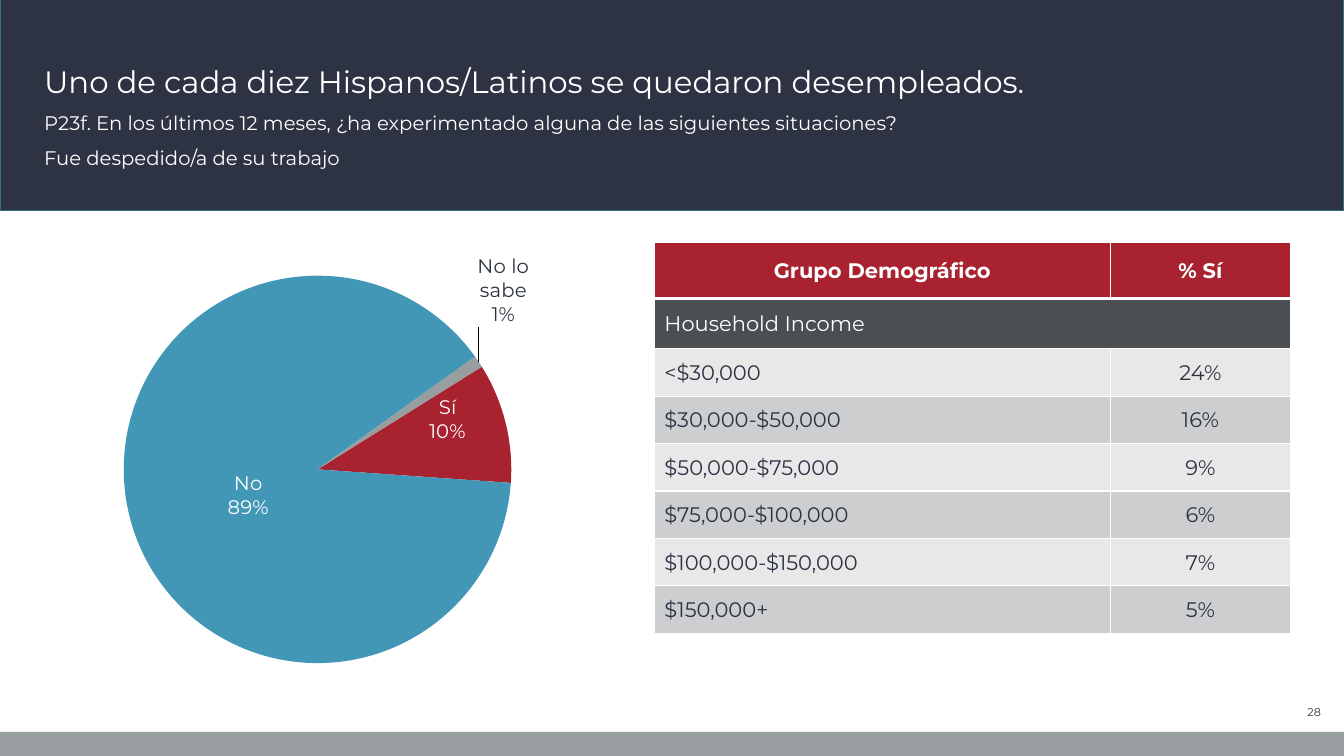
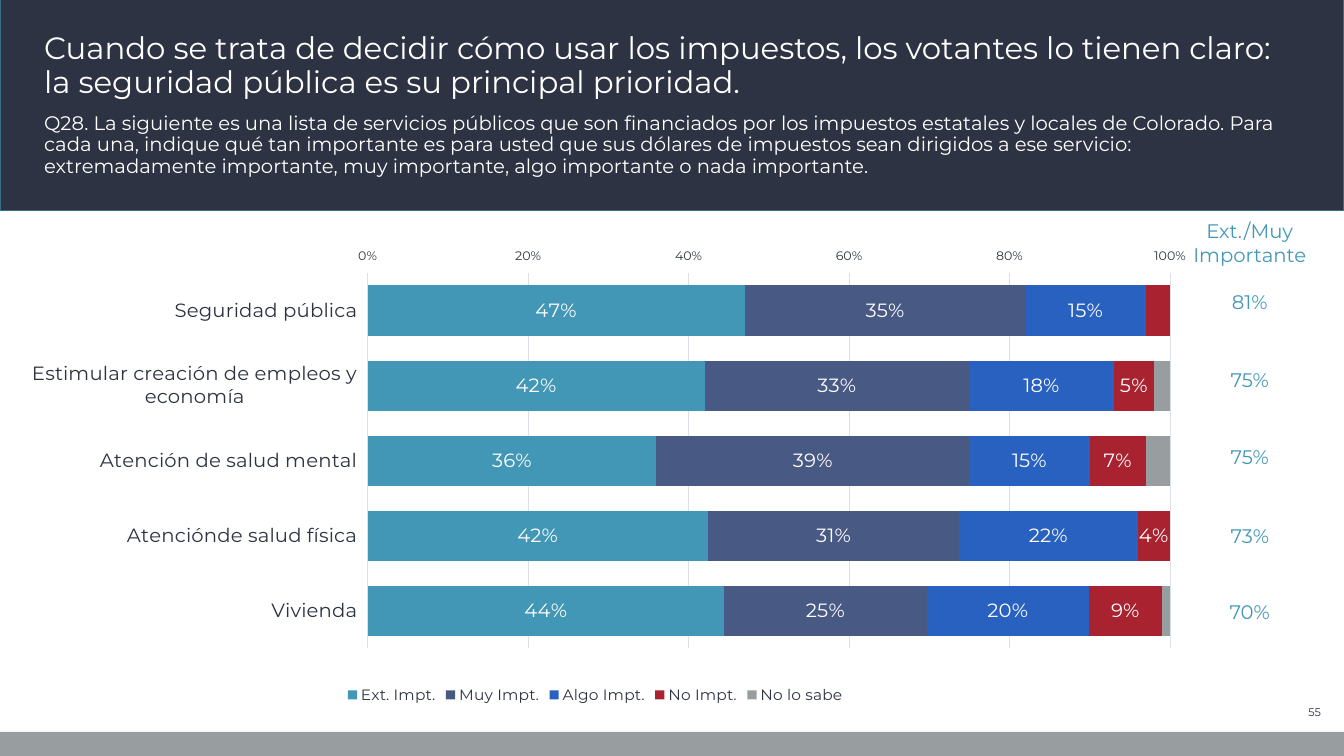
from dataclasses import dataclass
from typing import NamedTuple, Sequence

from lxml.etree import SubElement
from pptx import Presentation
from pptx.chart.chart import Chart
from pptx.chart.data import CategoryChartData
from pptx.dml.color import RGBColor
from pptx.enum.chart import XL_CHART_TYPE, XL_LABEL_POSITION, XL_LEGEND_POSITION
from pptx.enum.chart import XL_AXIS_CROSSES
from pptx.enum.shapes import MSO_SHAPE
from pptx.enum.text import MSO_ANCHOR, PP_ALIGN
from pptx.oxml import parse_xml
from pptx.oxml.ns import nsdecls, qn
from pptx.slide import Slide
from pptx.table import Table, _Cell
from pptx.util import Emu, Inches, Pt

NAVY = RGBColor(0x2D, 0x33, 0x42)
OUTLINE = RGBColor(0x32, 0x70, 0x87)
TEAL = RGBColor(0x43, 0x97, 0xB6)
SLATE = RGBColor(0x48, 0x5A, 0x84)
BLUE = RGBColor(0x29, 0x61, 0xC0)
RED = RGBColor(0xA8, 0x22, 0x30)
GRAY = RGBColor(0x98, 0x9D, 0xA0)
CHARCOAL = RGBColor(0x4B, 0x4F, 0x51)
LIGHT = RGBColor(0xE8, 0xE8, 0xE9)
MEDIUM = RGBColor(0xCD, 0xCE, 0xCF)
GRID = RGBColor(0xDB, 0xDF, 0xE7)
WHITE = RGBColor(0xFF, 0xFF, 0xFF)

FONT = "Montserrat"
PLAIN_TABLE = "{2D5ABB26-0587-4C30-8999-92F81FD0307C}"
WIDTH, HEIGHT = Inches(13.33), Inches(7.5)


def across(percent: float) -> Emu:
    return Emu(round(WIDTH * percent / 100))


def down(percent: float) -> Emu:
    return Emu(round(HEIGHT * percent / 100))


class Box(NamedTuple):
    """A place on the slide, in percent of its width and height."""
    left: float
    top: float
    width: float
    height: float

    def emu(self) -> tuple[Emu, Emu, Emu, Emu]:
        return across(self.left), down(self.top), across(self.width), down(self.height)


BAND = Box(0, -0.4, 100, 28.27)
FOOTER = Box(0, 96.8, 100, 3.2)
TITLE = Box(2.55, 0.93, 94.82, 12.93)
QUESTION = Box(2.55, 14.4, 94.82, 12.27)
NUMBER = Box(93.17, 92.67, 5.85, 3.2)


@dataclass
class CellStyle:
    color: RGBColor
    size: float
    align: PP_ALIGN = PP_ALIGN.CENTER
    anchor: MSO_ANCHOR = MSO_ANCHOR.MIDDLE
    bold: bool = False
    fill: RGBColor | None = None
    side_inset: float = 0.01
    line_spacing: Pt | None = None


class Series(NamedTuple):
    name: str
    values: Sequence[float]
    color: RGBColor
    labelled: bool = True
    unlabelled_points: Sequence[int] = ()


class Slice(NamedTuple):
    name: str
    value: float
    color: RGBColor
    label_color: RGBColor
    position: XL_LABEL_POSITION
    shift: tuple[float, float]


def style_font(font, size: float, color: RGBColor, bold: bool = False) -> None:
    font.name, font.size, font.bold = FONT, Pt(size), bold
    font.color.rgb = color


def add_rect(s: Slide, box: Box, fill: RGBColor, line: RGBColor | None = None) -> None:
    sp = s.shapes.add_shape(MSO_SHAPE.RECTANGLE, *box.emu())
    sp.shadow.inherit = False
    sp.fill.solid()
    sp.fill.fore_color.rgb = fill
    if line is None:
        sp.line.fill.background()
    else:
        sp.line.color.rgb = line
        sp.line.width = Pt(1)


def add_text(s: Slide, box: Box, lines: Sequence[str], size: float, color: RGBColor = WHITE,
             anchor: MSO_ANCHOR = MSO_ANCHOR.TOP, align: PP_ALIGN = PP_ALIGN.LEFT) -> None:
    tf = s.shapes.add_textbox(*box.emu()).text_frame
    tf.word_wrap = True
    tf.vertical_anchor = anchor
    for i, line in enumerate(lines):
        p = tf.add_paragraph() if i else tf.paragraphs[0]
        p.text = line
        p.alignment = align
        p.line_spacing = 0.9
        p.space_before = Pt(10 if i else 0)
        style_font(p.font, size, color)


def add_base(prs, title: str, question: Sequence[str], number: int) -> Slide:
    """Add a slide with its band, title, question, footer and page number."""
    s = prs.slides.add_slide(prs.slide_layouts[6])
    add_rect(s, BAND, NAVY, OUTLINE)
    add_rect(s, FOOTER, GRAY)
    add_text(s, TITLE, [title], 22, anchor=MSO_ANCHOR.BOTTOM)
    add_text(s, QUESTION, question, 14)
    add_text(s, NUMBER, [str(number)], 8, NAVY, MSO_ANCHOR.MIDDLE, PP_ALIGN.RIGHT)
    return s


def add_table(s: Slide, left: float, top: float, cols: Sequence[float],
              rows: Sequence[float]) -> Table:
    box = Box(left, top, sum(cols), sum(rows))
    table = s.shapes.add_table(len(rows), len(cols), *box.emu()).table
    table.first_row = table.horz_banding = False
    table._tbl.tblPr.find(qn("a:tableStyleId")).text = PLAIN_TABLE
    for column, width in zip(table.columns, cols):
        column.width = across(width)
    for row, height in zip(table.rows, rows):
        row.height = down(height)
    return table


def fill_cell(cell: _Cell, text: str, style: CellStyle) -> None:
    cell.margin_left = cell.margin_right = Inches(style.side_inset)
    cell.margin_top = Inches(0.01)
    cell.margin_bottom = 0
    cell.vertical_anchor = style.anchor
    if style.fill is None:
        cell.fill.background()
    else:
        cell.fill.solid()
        cell.fill.fore_color.rgb = style.fill
    p = cell.text_frame.paragraphs[0]
    p.text = text
    p.alignment = style.align
    p.line_spacing = style.line_spacing
    style_font(p.font, style.size, style.color, style.bold)


def add_borders(cell: _Cell, top: float = 1, bottom: float = 1) -> None:
    tcPr = cell._tc.get_or_add_tcPr()
    widths = {"lnL": 1, "lnR": 1, "lnT": top, "lnB": bottom}
    for i, (tag, width) in enumerate(widths.items()):
        tcPr.insert(i, parse_xml(
            f'<a:{tag} {nsdecls("a")} w="{Pt(width)}"><a:solidFill>'
            f'<a:srgbClr val="{WHITE}"/></a:solidFill></a:{tag}>'))


def manual_layout(x: float, y: float, size: tuple[float, float] | None = None):
    """Make a chart layout: a plot area when a size is given, else a label shift."""
    parts = [("x", x), ("y", y)]
    if size:
        parts = [("layoutTarget", "inner"), ("xMode", "edge"), ("yMode", "edge"),
                 *parts, ("w", size[0]), ("h", size[1])]
    inner = "".join(f'<c:{tag} val="{value}"/>' for tag, value in parts)
    return parse_xml(f'<c:layout {nsdecls("c")}><c:manualLayout>{inner}'
                     '</c:manualLayout></c:layout>')


def add_chart(s: Slide, kind: XL_CHART_TYPE, box: Box, data: CategoryChartData,
              plot: Box, size: float) -> Chart:
    """Add a chart whose plot area is given in percent of the chart."""
    chart = s.shapes.add_chart(kind, *box.emu(), data).chart
    chart.has_title = chart.has_legend = False
    style_font(chart.font, size, NAVY)
    area = chart._chartSpace.chart.plotArea
    for layout in area.findall(qn("c:layout")):
        area.remove(layout)
    x, y, w, h = (share / 100 for share in plot)
    area.insert(0, manual_layout(x, y, (w, h)))
    return chart


def style_labels(labels) -> None:
    labels.show_value = True
    labels.number_format = "0%"
    labels.number_format_is_linked = False
    style_font(labels.font, 14, WHITE)


def paint(part, color: RGBColor) -> None:
    part.format.fill.solid()
    part.format.fill.fore_color.rgb = color


def add_pie(s: Slide, box: Box, slices: Sequence[Slice]) -> None:
    data = CategoryChartData(number_format="0%")
    data.categories = [piece.name for piece in slices]
    data.add_series("Series 1", [piece.value for piece in slices])
    chart = add_chart(s, XL_CHART_TYPE.PIE, box, data, Box(20.6, 5.7, 64.5, 89.2), 10)
    plot = chart.plots[0]
    plot.vary_by_categories = True
    SubElement(plot._element, qn("c:firstSliceAng")).set("val", "58")

    series = plot.series[0]
    labels = series.data_labels
    style_labels(labels)
    labels.show_category_name = True
    for i, piece in enumerate(slices):
        point = series.points[i]
        paint(point, piece.color)
        style_font(point.data_label.font, 14, piece.label_color)
        point.data_label.position = piece.position
    for dLbl, piece in zip(labels._element.findall(qn("c:dLbl")), slices):
        dLbl.insert(1, manual_layout(*piece.shift))
        dLbl.find(qn("c:showCatName")).set("val", "1")
        SubElement(dLbl, qn("c:separator")).text = "\n"
    leader = labels._element.find(qn("c:showLeaderLines"))
    if leader is None:
        leader = SubElement(labels._element, qn("c:showLeaderLines"))
    leader.set("val", "1")


def add_bars(s: Slide, box: Box, categories: Sequence[str], rows: Sequence[Series]) -> None:
    data = CategoryChartData(number_format="0%")
    data.categories = categories
    for row in rows:
        data.add_series(row.name, row.values)
    chart = add_chart(s, XL_CHART_TYPE.BAR_STACKED_100, box, data,
                      Box(31.1, 3.2, 66.6, 83.4), 14)
    plot = chart.plots[0]
    plot.gap_width, plot.overlap, plot.vary_by_categories = 50, 100, False
    for series, row in zip(plot.series, rows):
        paint(series, row.color)
        if row.labelled:
            style_labels(series.data_labels)
            for i in row.unlabelled_points:
                series.data_labels._element.insert(0, parse_xml(
                    f'<c:dLbl {nsdecls("c")}><c:idx val="{i}"/><c:delete val="1"/></c:dLbl>'))

    names, scale = chart.category_axis, chart.value_axis
    names.reverse_order = True
    names.crosses = XL_AXIS_CROSSES.MAXIMUM
    scale.major_unit = 0.2
    scale.tick_labels.number_format = "0%"
    scale.tick_labels.number_format_is_linked = False
    scale.major_gridlines.format.line.color.rgb = GRID
    scale.major_gridlines.format.line.width = Pt(0.75)
    for axis, size in ((names, 14), (scale, 9)):
        axis.format.line.fill.background()
        style_font(axis.tick_labels.font, size, NAVY)
    chart.has_legend = True
    chart.legend.position = XL_LEGEND_POSITION.BOTTOM
    chart.legend.include_in_layout = False
    style_font(chart.legend.font, 11, NAVY)


def add_income_table(s: Slide) -> None:
    incomes = [("<$30,000", "24%"), ("$30,000-$50,000", "16%"), ("$50,000-$75,000", "9%"),
               ("$75,000-$100,000", "6%"), ("$100,000-$150,000", "7%"), ("$150,000+", "5%")]
    rows = [("Grupo Demográfico", "% Sí"), ("Household Income", ""), *incomes]
    table = add_table(s, 48.69, 32, [33.91, 13.43], [7.47, 6.67] + [6.27] * len(incomes))
    fills = [RED, CHARCOAL] + [LIGHT, MEDIUM] * (len(incomes) // 2)
    for i, (row, fill) in enumerate(zip(rows, fills)):
        for j, text in enumerate(row):
            left = i > 0 and j == 0
            style = CellStyle(WHITE if i < 2 else NAVY, 15, bold=i == 0, fill=fill,
                              align=PP_ALIGN.LEFT if left else PP_ALIGN.CENTER,
                              side_inset=0.1 if left else 0.01)
            fill_cell(table.cell(i, j), text, style)
            add_borders(table.cell(i, j), 3 if i == 1 else 1, 3 if i == 0 else 1)
    table.cell(1, 0).merge(table.cell(1, 1))


def add_importance_table(s: Slide) -> None:
    texts = ["Ext./Muy Importante", "81%", "75%", "75%", "73%", "70%"]
    table = add_table(s, 85.9, 28.93, [14.18], [5.47, 6.27, 10.27, 10.13, 10.53, 10])
    for i, text in enumerate(texts):
        fill_cell(table.cell(i, 0), text, CellStyle(
            TEAL, 14, anchor=MSO_ANCHOR.BOTTOM, line_spacing=Pt(17)))


def main() -> None:
    prs = Presentation()
    prs.slide_width, prs.slide_height = WIDTH, HEIGHT

    s = add_base(prs, "Uno de cada diez Hispanos/Latinos se quedaron desempleados.", [
        "P23f. En los últimos 12 meses, ¿ha experimentado alguna de las siguientes situaciones?",
        "Fue despedido/a de su trabajo"], 28)
    add_income_table(s)
    center, outside = XL_LABEL_POSITION.CENTER, XL_LABEL_POSITION.OUTSIDE_END
    add_pie(s, Box(0, 32.53, 44.71, 58.8), [
        Slice("Sí", 0.1, RED, WHITE, center, (0.06, -0.06)),
        Slice("No", 0.89, TEAL, WHITE, center, (0.04, 0)),
        Slice("No lo sabe", 0.01, GRAY, NAVY, outside, (-0.01, -0.07))])

    s = add_base(prs, "Cuando se trata de decidir cómo usar los impuestos, los votantes lo tienen "
                 "claro: la seguridad pública es su principal prioridad.", [
        "Q28. La siguiente es una lista de servicios públicos que son financiados por los "
        "impuestos estatales y locales de Colorado. Para cada una, indique qué tan importante es "
        "para usted que sus dólares de impuestos sean dirigidos a ese servicio: extremadamente "
        "importante, muy importante, algo importante o nada importante."], 55)
    add_bars(s, Box(-0.53, 32.8, 89.65, 60.93), [
        "Seguridad pública", "Estimular creación de empleos y economía",
        "Atención de salud mental", "Atenciónde salud física", "Vivienda"], [
        Series("Ext. Impt.", (0.47, 0.42, 0.36, 0.42, 0.44), TEAL),
        Series("Muy Impt.", (0.35, 0.33, 0.39, 0.31, 0.25), SLATE),
        Series("Algo Impt.", (0.15, 0.18, 0.15, 0.22, 0.2), BLUE),
        Series("No Impt.", (0.03, 0.05, 0.07, 0.04, 0.09), RED, unlabelled_points=[0]),
        Series("No lo sabe", (0, 0.02, 0.03, 0, 0.01), GRAY, labelled=False)])
    add_importance_table(s)
    prs.save("out.pptx")


if __name__ == "__main__":
    main()
